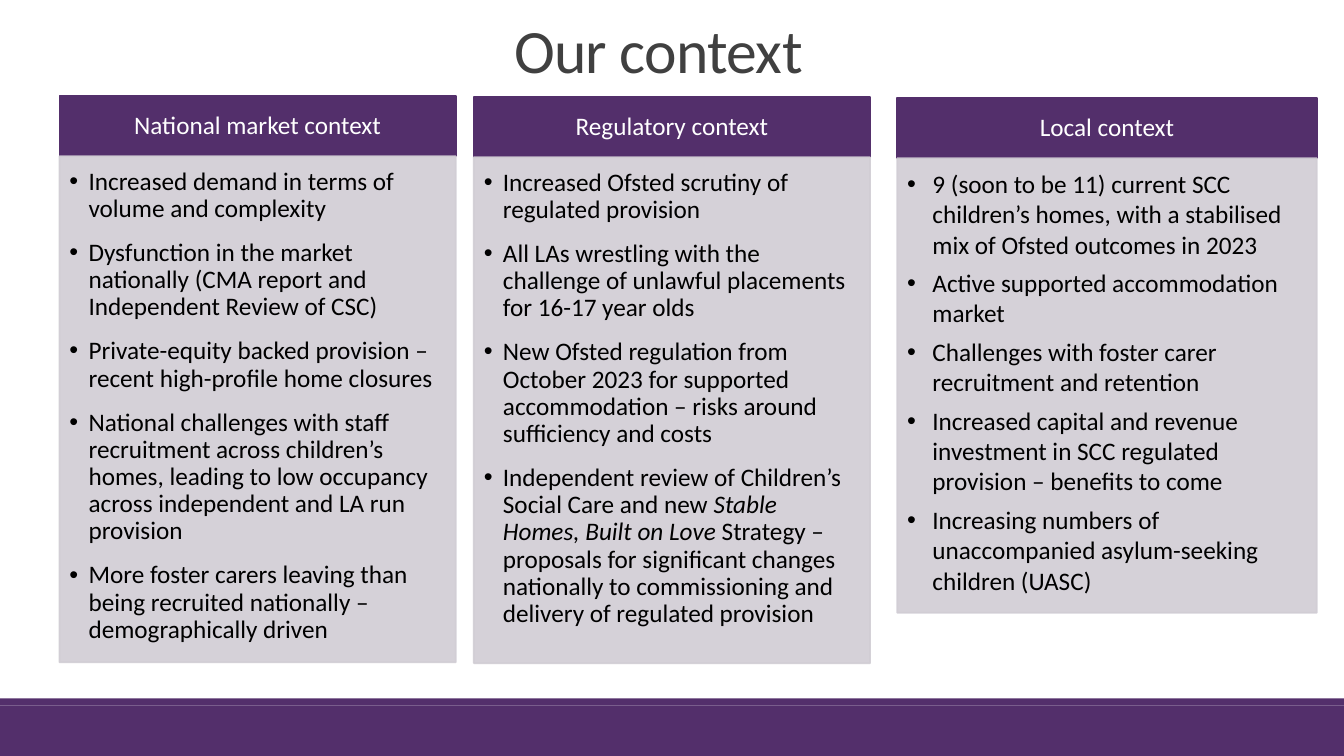
"""Build the 'Our context' slide with three headed bullet columns."""
from lxml import etree
from pptx import Presentation
from pptx.dml.color import RGBColor
from pptx.enum import shapes, text
from pptx.oxml import ns
from pptx.util import Inches, Pt

PURPLE = RGBColor(0x53, 0x2F, 0x6B)
PANEL = RGBColor(0xD1, 0xCD, 0xD4)
WHITE = RGBColor(0xFF, 0xFF, 0xFF)
BLACK = RGBColor(0, 0, 0)
TITLE_GREY = RGBColor(0x40, 0x40, 0x40)
FONT = "Calibri"
HEADER_HEIGHT = 0.6

TITLE = "Our context"
BANDS = [(7, 0.5), (6.93, 0.07)]
NATIONAL = [
    "Increased demand in terms of volume and complexity",
    "Dysfunction in the market nationally (CMA report and Independent Review of CSC)",
    "Private-equity backed provision – recent high-profile home closures",
    "National challenges with staff recruitment across children’s homes, "
    "leading to low occupancy across independent and LA run provision",
    "More foster carers leaving than being recruited nationally – demographically driven",
]
REGULATORY = [
    "Increased Ofsted scrutiny of regulated provision",
    "All LAs wrestling with the challenge of unlawful placements for 16-17 year olds",
    "New Ofsted regulation from October 2023 for supported accommodation – "
    "risks around sufficiency and costs",
    "Independent review of Children’s Social Care and new *Stable Homes, Built on Love *"
    "Strategy – proposals for significant changes nationally to commissioning "
    "and delivery of regulated provision",
]
LOCAL = [
    "9 (soon to be 11) current SCC children’s homes, with a stabilised mix of "
    "Ofsted outcomes in 2023",
    "Active supported accommodation market",
    "Challenges with foster carer recruitment and retention",
    "Increased capital and revenue investment in SCC regulated provision – benefits to come",
    "Increasing numbers of unaccompanied asylum-seeking children (UASC)",
]
WIDE_GAPS = {"level": 1, "indent": 0.19, "spacing": 0.9, "after": 12, "inset": 0.12}
TIGHT_GAPS = {"level": 0, "indent": 0.25, "spacing": 1.0, "after": 6, "inset": 0.1}
COLUMNS = [
    ("National market context", NATIONAL, 0.59, 0.95, 3.93, 5.02, WIDE_GAPS),
    ("Regulatory context", REGULATORY, 4.7, 0.96, 3.93, 5.02, WIDE_GAPS),
    ("Local context", LOCAL, 8.9, 0.97, 4.16, 4.51, TIGHT_GAPS),
]


def add_box(slide, left, top, width, height, color, outlined=True):
    box = slide.shapes.add_shape(
        shapes.MSO_SHAPE.RECTANGLE, Inches(left), Inches(top), Inches(width), Inches(height))
    box.shadow.inherit = False
    box.fill.solid()
    box.fill.fore_color.rgb = color
    if outlined:
        box.line.color.rgb = color
        box.line.width = Pt(1.25)
    else:
        box.line.fill.background()
    return box


def set_margins(frame, left, top, right, bottom):
    frame.word_wrap = True
    frame.margin_left, frame.margin_top = Inches(left), Inches(top)
    frame.margin_right, frame.margin_bottom = Inches(right), Inches(bottom)


def set_font(paragraph, size, color):
    paragraph.font.name = FONT
    paragraph.font.size = Pt(size)
    paragraph.font.color.rgb = color


def add_header(slide, heading, left, top, width):
    header = add_box(slide, left, top, width, HEADER_HEIGHT, PURPLE)
    frame = header.text_frame
    set_margins(frame, 0.14, 0.08, 0.14, 0.08)
    frame.vertical_anchor = text.MSO_ANCHOR.MIDDLE
    paragraph = frame.paragraphs[0]
    paragraph.text = heading
    paragraph.alignment = text.PP_ALIGN.CENTER
    paragraph.line_spacing = 0.9
    set_font(paragraph, 18, WHITE)


def write_bullet(paragraph, bullet, style):
    paragraph.level = style["level"]
    paragraph.alignment = text.PP_ALIGN.LEFT
    paragraph.line_spacing = style["spacing"]
    paragraph.space_after = Pt(style["after"])
    properties = paragraph._p.get_or_add_pPr()
    properties.set("marL", str(Inches(style["indent"])))
    properties.set("indent", str(-Inches(style["indent"])))
    etree.SubElement(properties, ns.qn("a:buFont"), typeface="Arial")
    etree.SubElement(properties, ns.qn("a:buChar"), char="•")
    set_font(paragraph, 18, BLACK)
    for index, part in enumerate(bullet.split("*")):
        run = paragraph.add_run()
        run.text = part
        if index % 2:
            run.font.italic = True


def add_panel(slide, bullets, left, top, width, height, style):
    panel = add_box(slide, left, top, width, height, PANEL)
    for color in panel._element.spPr.iter(ns.qn("a:srgbClr")):
        etree.SubElement(color, ns.qn("a:alpha"), val="90000")
    frame = panel.text_frame
    set_margins(frame, 0.1, style["inset"], 0.14, 0.16)
    frame.vertical_anchor = text.MSO_ANCHOR.TOP
    for index, bullet in enumerate(bullets):
        paragraph = frame.add_paragraph() if index else frame.paragraphs[0]
        write_bullet(paragraph, bullet, style)


def write_title(title):
    title.left, title.top = Inches(1.03), Inches(-0.01)
    title.width, title.height = Inches(11), Inches(0.91)
    frame = title.text_frame
    frame.text = TITLE
    frame.auto_size = text.MSO_AUTO_SIZE.NONE
    frame.vertical_anchor = text.MSO_ANCHOR.BOTTOM
    paragraph = frame.paragraphs[0]
    paragraph.alignment = text.PP_ALIGN.CENTER
    paragraph.line_spacing = 0.85
    set_font(paragraph, 44, TITLE_GREY)
    paragraph.runs[0]._r.get_or_add_rPr().set("spc", "-50")


def main():
    presentation = Presentation()
    presentation.slide_width, presentation.slide_height = Inches(13.33), Inches(7.5)
    slide = presentation.slides.add_slide(presentation.slide_layouts[5])
    write_title(slide.shapes.title)
    for top, height in BANDS:
        add_box(slide, 0, top, 13.33, height, PURPLE, outlined=False)
    for heading, bullets, left, top, width, height, style in COLUMNS:
        add_header(slide, heading, left, top, width)
        add_panel(slide, bullets, left, top + HEADER_HEIGHT, width, height, style)
    presentation.save("out.pptx")


if __name__ == "__main__":
    main()
